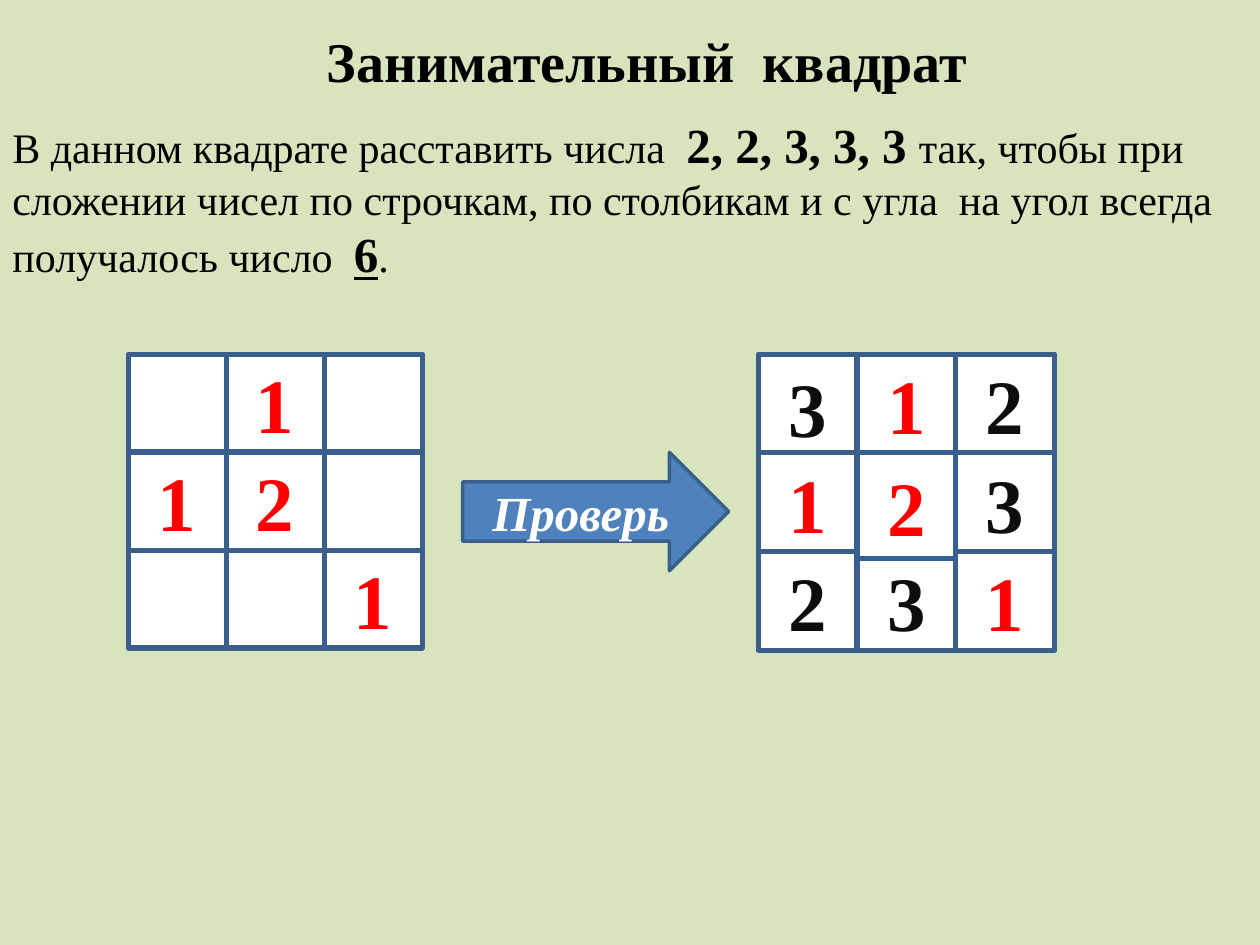
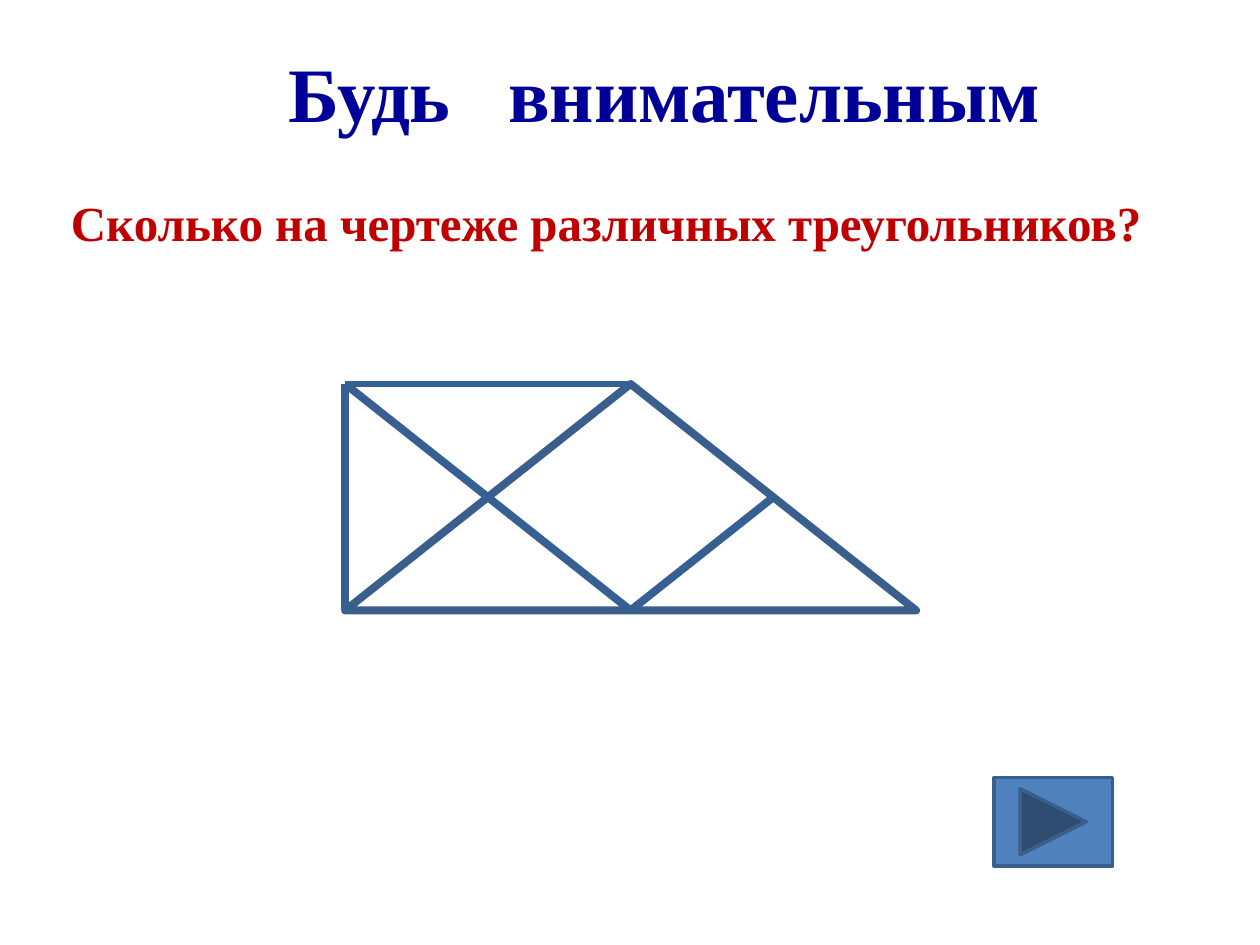
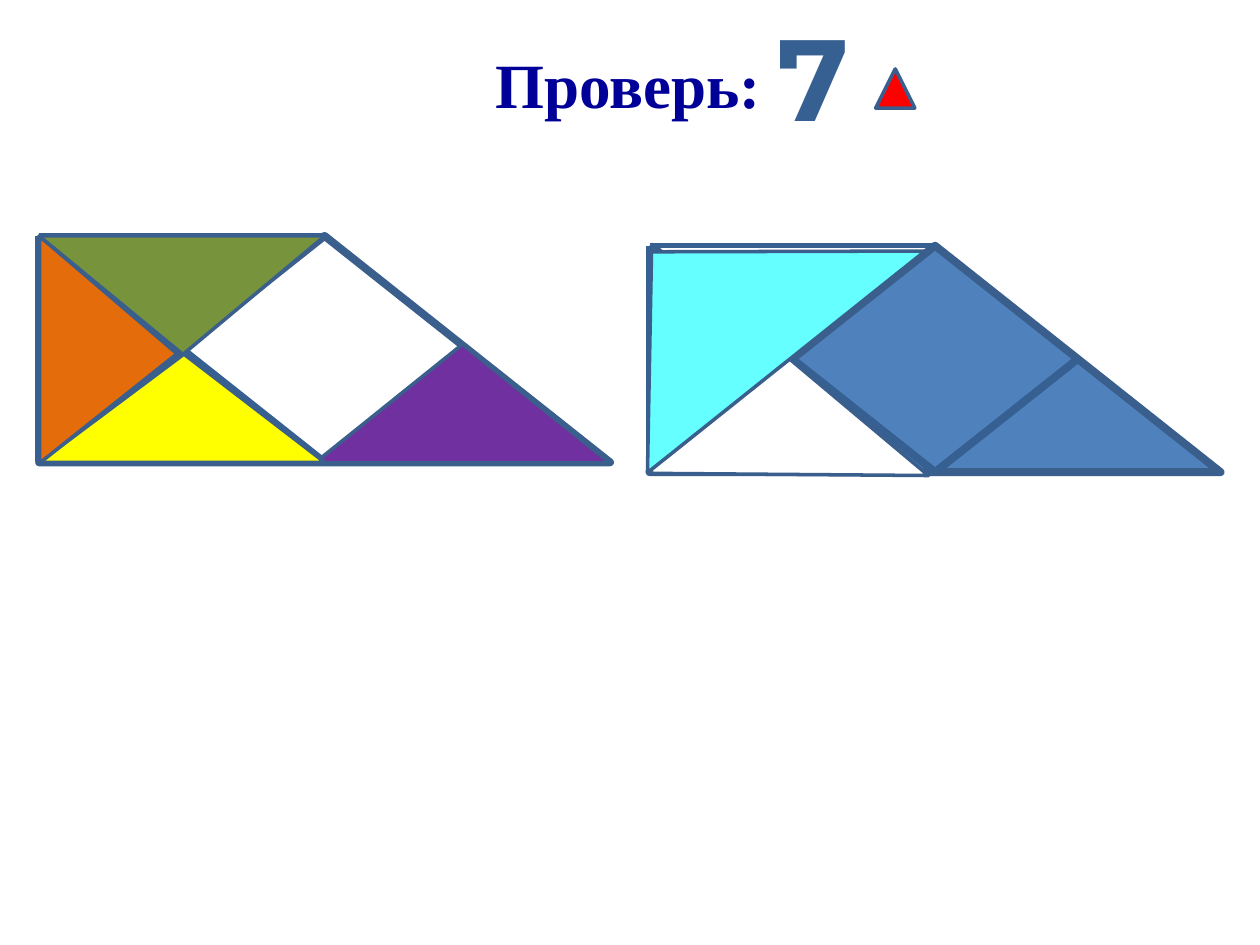
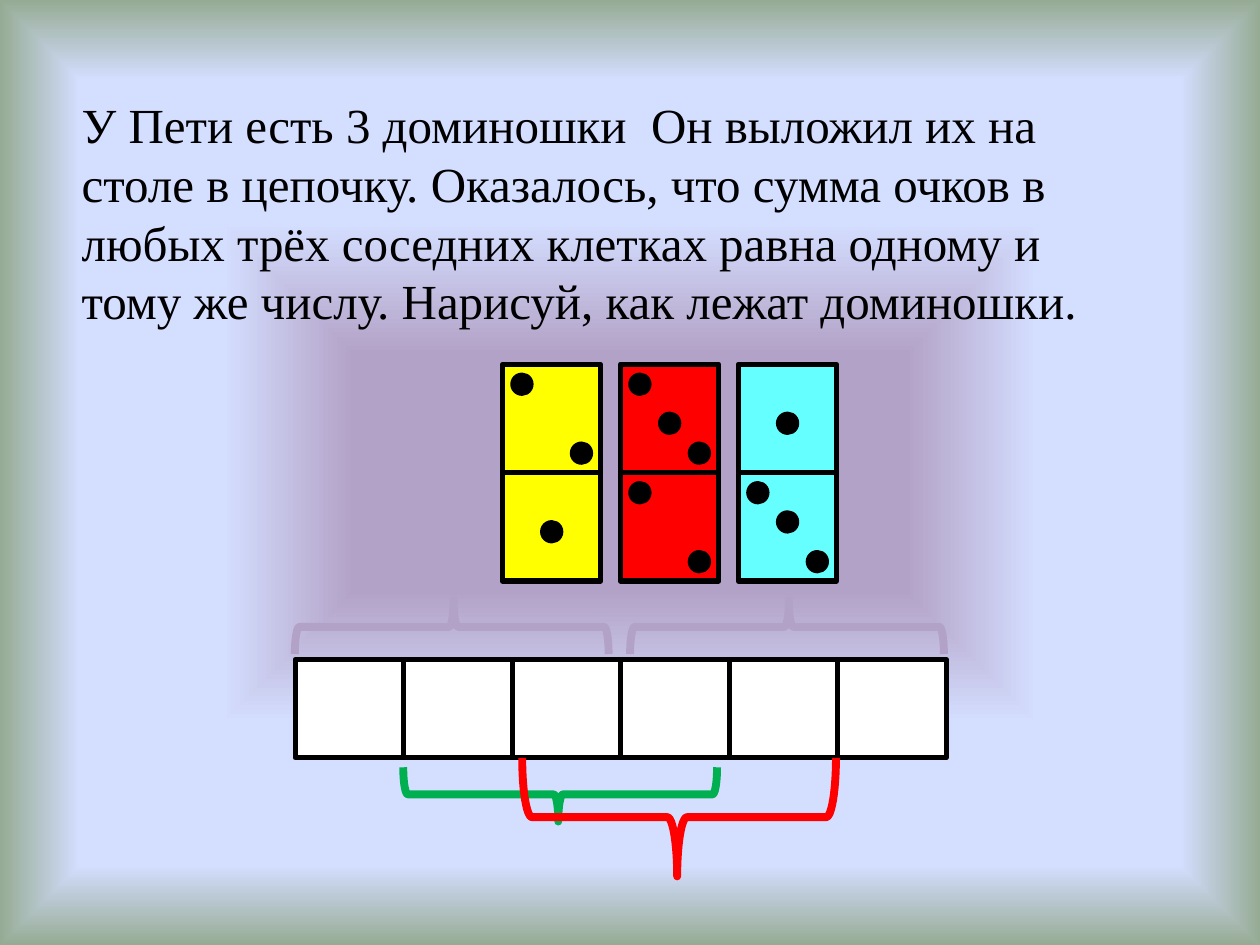
import pptx
import pptx.dml.color
import pptx.enum.shapes
import pptx.enum.text
import pptx.oxml
import pptx.oxml.ns
import pptx.util

SHAPES = pptx.enum.shapes.MSO_SHAPE
COLORS = {
    "black": "000000", "white": "FFFFFF", "ink": "0D0D0D", "red": "FF0000",
    "dark_red": "C00000", "navy": "000099", "blue": "4F81BD", "edge": "3A5F8C",
    "stroke": "376092", "pale_green": "D7E4BD", "purple": "7030A0",
    "yellow": "FFFF00", "orange": "E46C0A", "olive": "77933C",
    "cyan": "66FFFF", "lilac": "B3A2C7", "green": "00B050",
    "sky": "D4DEFF", "sage": "96AB94",
}
SERIF = "Times New Roman"
INSET = 7.2


def color(name):
    return pptx.dml.color.RGBColor.from_string(COLORS[name])


def points(*lengths):
    return [pptx.util.Pt(length) for length in lengths]


class Deck:
    TITLE_ONLY, BLANK = 5, 6

    def __init__(self):
        self.presentation = pptx.Presentation()
        self.presentation.slide_width, self.presentation.slide_height = points(720, 540)
        self.slide = None

    def new_slide(self, layout, background="white"):
        self.slide = self.presentation.slides.add_slide(
            self.presentation.slide_layouts[layout])
        fill = self.slide.background.fill
        fill.solid()
        fill.fore_color.rgb = color(background)

    def gradient_background(self, stops):
        """Fill the background from the centre out; stops are (percent, colour, alpha)."""
        marks = "".join(
            f'<a:gs pos="{percent * 1000}"><a:srgbClr val="{COLORS[name]}">'
            f'<a:alpha val="{alpha * 1000}"/></a:srgbClr></a:gs>'
            for percent, name, alpha in stops)
        gradient = pptx.oxml.parse_xml(
            f'<a:gradFill {pptx.oxml.ns.nsdecls("a")} rotWithShape="1">'
            f'<a:gsLst>{marks}</a:gsLst><a:path path="rect">'
            '<a:fillToRect l="50000" t="50000" r="50000" b="50000"/>'
            '</a:path></a:gradFill>')
        solid = self.slide.element.find(
            ".//" + pptx.oxml.ns.qn("p:bgPr") + "/" + pptx.oxml.ns.qn("a:solidFill"))
        solid.getparent().replace(solid, gradient)

    def format_run(self, run, size, ink="black", bold=False, italic=False,
                   underline=False, face=SERIF):
        font = run.font
        font.name, font.size = face, pptx.util.Pt(size)
        font.bold, font.italic, font.underline = bold, italic, underline
        font.color.rgb = color(ink)

    def frame(self, holder, gap=0, wrap=True):
        """Make a text frame top-left, grown to its text, moved in by gap."""
        text_frame = holder.text_frame
        text_frame.word_wrap = wrap
        text_frame.auto_size = pptx.enum.text.MSO_AUTO_SIZE.SHAPE_TO_FIT_TEXT
        text_frame.vertical_anchor = pptx.enum.text.MSO_ANCHOR.TOP
        text_frame.margin_left = pptx.util.Pt(INSET + gap)
        return text_frame

    def title(self, wording, box, size, ink, gap=0, wrap=True):
        heading = self.slide.shapes.title
        heading.left, heading.top, heading.width, heading.height = points(*box)
        text_frame = self.frame(heading, gap, wrap)
        text_frame.text = wording
        paragraph = text_frame.paragraphs[0]
        paragraph.alignment = pptx.enum.text.PP_ALIGN.LEFT
        self.format_run(paragraph.runs[0], size, ink, bold=True)

    def text(self, parts, box, gap=0, centered=False):
        """Add a text box; parts are (wording, run style) pairs."""
        text_frame = self.frame(self.slide.shapes.add_textbox(*points(*box)), gap)
        paragraph = text_frame.paragraphs[0]
        if centered:
            paragraph.alignment = pptx.enum.text.PP_ALIGN.CENTER
        for wording, style in parts:
            run = paragraph.add_run()
            run.text = wording
            self.format_run(run, **style)

    def shape(self, kind, box, fill=None, edge="edge", weight=2, turn=0, adjust=()):
        item = self.slide.shapes.add_shape(kind, *points(*box))
        item.shadow.inherit = False
        item.rotation = turn
        if fill:
            item.fill.solid()
            item.fill.fore_color.rgb = color(fill)
        else:
            item.fill.background()
        item.line.color.rgb = color(edge)
        item.line.width = pptx.util.Pt(weight)
        for index, value in enumerate(adjust):
            item.adjustments[index] = value
        return item

    def label(self, item, wording, **style):
        item.text_frame.text = wording
        item.text_frame.vertical_anchor = pptx.enum.text.MSO_ANCHOR.MIDDLE
        paragraph = item.text_frame.paragraphs[0]
        paragraph.alignment = pptx.enum.text.PP_ALIGN.CENTER
        self.format_run(paragraph.runs[0], **style)

    def line(self, start, end, weight=4.5):
        connector = self.slide.shapes.add_connector(
            pptx.enum.shapes.MSO_CONNECTOR.STRAIGHT, *points(*start, *end))
        connector.line.color.rgb = color("stroke")
        connector.line.width = pptx.util.Pt(weight)
        properties = connector.element.spPr
        properties.append(properties.makeelement(pptx.oxml.ns.qn("a:effectLst"), {}))

    def number_square(self, rows, givens, left, top, cell):
        """Draw a square of numbers, red where givens has one; None leaves a cell out."""
        for row, numbers in enumerate(rows):
            for column, number in enumerate(numbers):
                if number is None:
                    continue
                item = self.shape(
                    SHAPES.RECTANGLE,
                    (left + column * cell, top + row * cell, cell, cell), "white", weight=3)
                if number:
                    ink = "red" if givens[row][column] else "ink"
                    self.label(item, number, size=44, ink=ink, bold=True)

    def triangle_drawing(self, left, top, width=326.3, height=129.4):
        """Draw the outlined triangle with its left extension and inner lines."""
        middle, bottom = left + width / 2, top + height
        self.shape(SHAPES.ISOSCELES_TRIANGLE, (left, top, width, height), weight=4.5)
        self.line((left, top), (left, bottom))
        self.line((left, top), (middle, top), weight=3)
        self.line((left, top), (middle, bottom))
        self.line((middle, bottom), (left + width * 0.75, top + height / 2))

    def domino(self, left, fill, turn, pips, lower_middle=25.2):
        """Draw two halves with pips; lower_middle is the lower centre pip's drop."""
        top, step, size = 211, 62, 11.3
        for half in (0, 1):
            self.shape(SHAPES.RECTANGLE, (left, top + half * step, 61.9, 56.2),
                       fill, "black", 3, turn)
        for half, count in enumerate(pips):
            drops = {0: 2.9, 1: lower_middle if half else 25.2, 2: 42.3}
            for place in {1: (1,), 2: (0, 2), 3: (0, 1, 2)}[count]:
                box = (left + 8.4 + 17 * place, top + half * step + drops[place], size, size)
                self.shape(SHAPES.OVAL, box, "black", "black")


def magic_square(deck):
    deck.new_slide(deck.TITLE_ONLY, "pale_green")
    deck.title("Занимательный  квадрат", (163.4, 11.3, 410.6, 46), 32, "black", gap=16)
    plain, strong = {"size": 24}, {"size": 28, "bold": True}
    deck.text([
        ("В данном квадрате расставить числа  ", plain),
        ("2, 2, 3, 3, 3 ", strong),
        ("так, чтобы при сложении чисел по строчкам, по столбикам и с угла  "
         "на угол всегда получалось число  ", plain),
        ("6", {**strong, "underline": True}),
        (".", plain),
    ], (0, 61.9, 720, 104.4))

    puzzle = [["", "1", ""], ["1", "2", ""], ["", "", "1"]]
    answer = [["", "1", "2"], ["1", None, "3"], ["2", "3", "1"]]
    top, cell = 202.4, 56.4
    deck.number_square(puzzle, puzzle, 73.3, top, 56)
    answer_left = 433.4
    deck.number_square(answer, puzzle, answer_left, top, cell)
    center = deck.shape(SHAPES.RECTANGLE, (answer_left + cell, top + cell, 56.2, 60.6),
                        "white", "stroke", 3)
    digit = {"size": 44, "bold": True}
    deck.label(center, "2", ink="red", **digit)
    deck.text([("3", {**digit, "ink": "ink"})], (answer_left, top, 56.2, 60.6), centered=True)
    arrow = deck.shape(SHAPES.RIGHT_ARROW, (264.4, 258.5, 152, 67.7), "blue")
    deck.label(arrow, "Проверь", size=28, ink="white", bold=True, italic=True)


def triangle_question(deck):
    deck.new_slide(deck.TITLE_ONLY)
    deck.title("Будь   внимательным", (157.6, 22.3, 448.6, 60.6), 44, "navy", wrap=False)
    deck.triangle_drawing(197.2, 219.4)
    deck.text([("Сколько на чертеже различных треугольников?",
                {"size": 28, "ink": "dark_red", "bold": True})],
              (22.3, 106.6, 663.8, 41), gap=11)
    deck.shape(SHAPES.ACTION_BUTTON_FORWARD_OR_NEXT, (568, 444.4, 67.7, 50.4), "blue")


def triangle_answer(deck):
    deck.new_slide(deck.TITLE_ONLY)
    deck.title("Проверь:", (185.8, 22.3, 292.3, 51), 36, "navy", gap=90)
    deck.shape(SHAPES.ISOSCELES_TRIANGLE, (371.2, 140.4, 326.3, 129.4), "blue")
    deck.triangle_drawing(22.3, 134.8)
    deck.triangle_drawing(371.2, 140.4)
    found_triangles = [
        ("purple", (180, 196.8, 168.5, 67.7), 0, 0.5),
        ("yellow", (22.3, 202.4, 163.4, 61.9), 0, 0.507),
        ("orange", (-2.9, 160.6, 129.6, 78.5), 90, 0.518),
        ("olive", (22.3, 134.8, 163.4, 67.7), 180, 0.497),
        ("white", (318.2, 194.4, 203.8, 100.8), 220, 0.599),
        ("cyan", (317.5, 120.2, 203, 97.2), 321.4, 0.397),
        ("red", (500.4, 39.4, 22.4, 22.4), 0, 0.5),
    ]
    for fill, box, turn, apex in found_triangles:
        deck.shape(SHAPES.ISOSCELES_TRIANGLE, box, fill, turn=turn, adjust=[apex])
    deck.text([("7", {"size": 66, "ink": "stroke", "bold": True, "face": "Montserrat"})],
              (399.6, 0, 112.3, 87), gap=37.5)


def domino_chain(deck):
    deck.new_slide(deck.BLANK)
    deck.gradient_background([(25, "lilac", 23), (53, "sky", 100),
                              (83, "sky", 100), (100, "sage", 100)])
    deck.text([("У Пети есть 3 доминошки  Он выложил их на столе в цепочку. "
                "Оказалось, что сумма очков в любых трёх соседних клетках равна "
                "одному и тому же числу. Нарисуй, как лежат доминошки.",
                {"size": 28})], (39.6, 50.4, 618.5, 143.3))
    deck.domino(284.2, "yellow", 270, (2, 1))
    deck.domino(351.6, "red", 90, (3, 2))
    deck.domino(419, "cyan", 270, (1, 3), lower_middle=19.6)
    for cell in range(6):
        deck.shape(SHAPES.RECTANGLE, (168.7 + cell * 62, 376.8, 62, 56.2),
                   "white", "black", 3)
    braces = [
        ("lilac", 242.6, 268.6, 31, 90),
        ("lilac", 434.2, 268.6, 31, 90),
        ("green", 304.6, 364.3, 31, 270),
        ("red", 354.2, 377.3, 67.7, 270),
    ]
    for edge, left, top, depth, turn in braces:
        deck.shape(SHAPES.LEFT_BRACE, (left, top, depth, 179.3), None, edge, 4.5,
                   turn, (0.083, 0.494))


def main():
    deck = Deck()
    magic_square(deck)
    triangle_question(deck)
    triangle_answer(deck)
    domino_chain(deck)
    deck.presentation.save("out.pptx")


if __name__ == "__main__":
    main()
